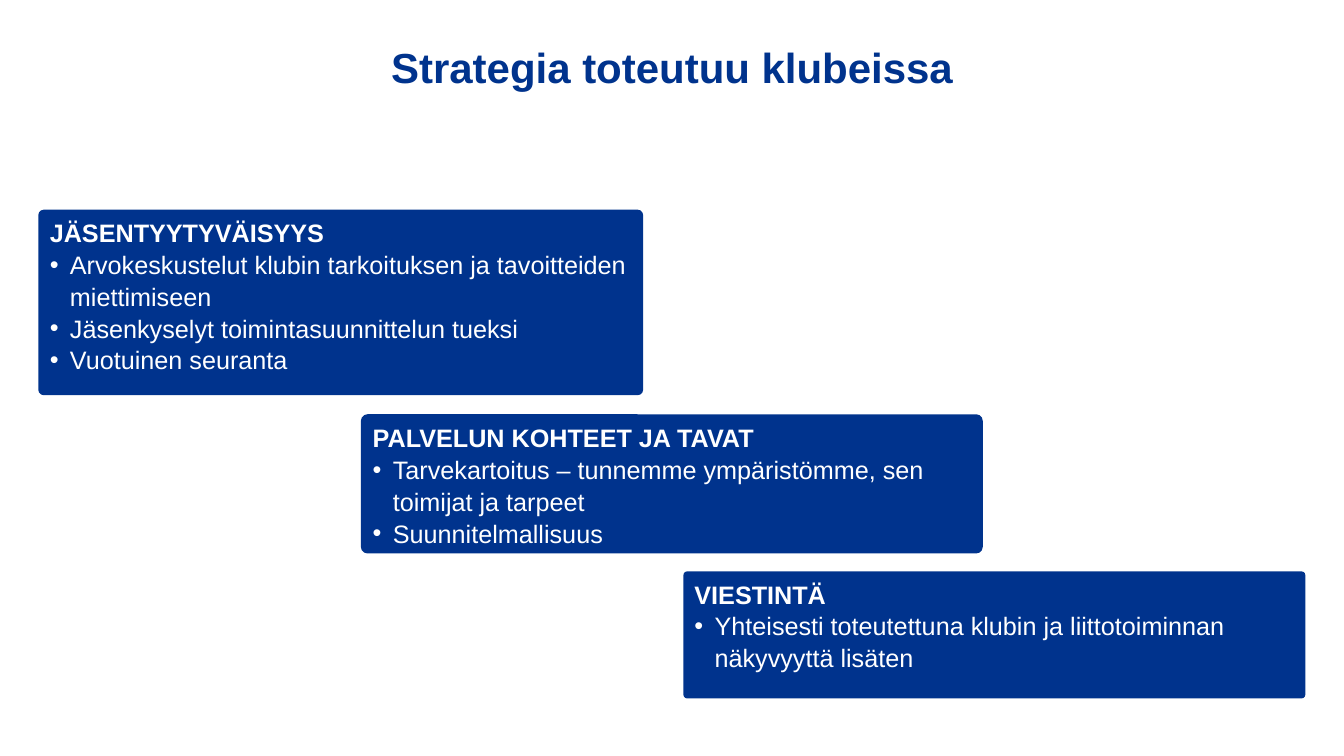
from lxml import etree
from pptx import Presentation
from pptx import util as u
from pptx.dml.color import RGBColor
from pptx.enum import shapes, text
from pptx.oxml.ns import qn

CARDS = [
    ((27.4, 149.8, 432, 132.5), 0.029, "JÄSENTYYTYVÄISYYS", [
        "Arvokeskustelut klubin tarkoituksen ja tavoitteiden miettimiseen",
        "Jäsenkyselyt toimintasuunnittelun tueksi",
        "Vuotuinen seuranta"]),
    ((257.8, 295.9, 444.2, 99.4), 0.047, "PALVELUN KOHTEET JA TAVAT", [
        "Tarvekartoitus – tunnemme ympäristömme, sen toimijat ja tarpeet",
        "Suunnitelmallisuus"]),
    ((488.2, 408.2, 444.2, 90.7), 0.029, "VIESTINTÄ", [
        "Yhteisesti toteutettuna klubin ja liittotoiminnan näkyvyyttä lisäten"]),
]


class StrategySlide:
    """Holds the style and the slide being built."""

    colors = {"blue": "00338D", "white": "FFFFFF"}
    font = "Arial"
    spacing = 1.05
    indent = 14.4

    def __init__(self, prs):
        self.slide = prs.slides.add_slide(prs.slide_layouts[5])

    def color(self, name):
        return RGBColor.from_string(self.colors[name])

    def format(self, p, size, color, bold, align):
        p.alignment = align
        p.line_spacing = self.spacing
        for r in p.runs:
            r.font.name = self.font
            r.font.size = u.Pt(size)
            r.font.bold = bold
            r.font.color.rgb = self.color(color)

    def bullet(self, p):
        pPr = p._p.get_or_add_pPr()
        pPr.set("marL", str(u.Pt(self.indent)))
        pPr.set("indent", str(-u.Pt(self.indent)))
        etree.SubElement(pPr, qn("a:buFont"), typeface=self.font)
        etree.SubElement(pPr, qn("a:buChar"), char="•")

    def title(self, box, words):
        sp = self.slide.shapes.title
        sp.left, sp.top, sp.width, sp.height = map(u.Pt, box)
        tf = sp.text_frame
        tf.text = words
        tf.word_wrap = True
        tf.auto_size = text.MSO_AUTO_SIZE.SHAPE_TO_FIT_TEXT
        tf.vertical_anchor = text.MSO_ANCHOR.TOP
        self.format(tf.paragraphs[0], 30, "blue", True, text.PP_ALIGN.CENTER)

    def card(self, box, rounding, heading, items):
        sp = self.slide.shapes.add_shape(
            shapes.MSO_SHAPE.ROUNDED_RECTANGLE, *map(u.Pt, box))
        sp.adjustments[0] = rounding
        sp.shadow.inherit = False
        sp.fill.solid()
        sp.fill.fore_color.rgb = self.color("blue")
        sp.line.fill.background()
        tf = sp.text_frame
        tf.word_wrap = True
        tf.vertical_anchor = text.MSO_ANCHOR.TOP
        tf.text = "\n".join([heading, *items])
        for i, p in enumerate(tf.paragraphs):
            if i:
                self.bullet(p)
            self.format(p, 18, "white", i == 0, text.PP_ALIGN.LEFT)


def main():
    prs = Presentation()
    prs.slide_width, prs.slide_height = u.Pt(960), u.Pt(540)
    s = StrategySlide(prs)
    s.title((182.9, 24.5, 594.7, 43.9), "Strategia toteutuu klubeissa")
    for card in CARDS:
        s.card(*card)
    prs.save("out.pptx")


if __name__ == "__main__":
    main()
